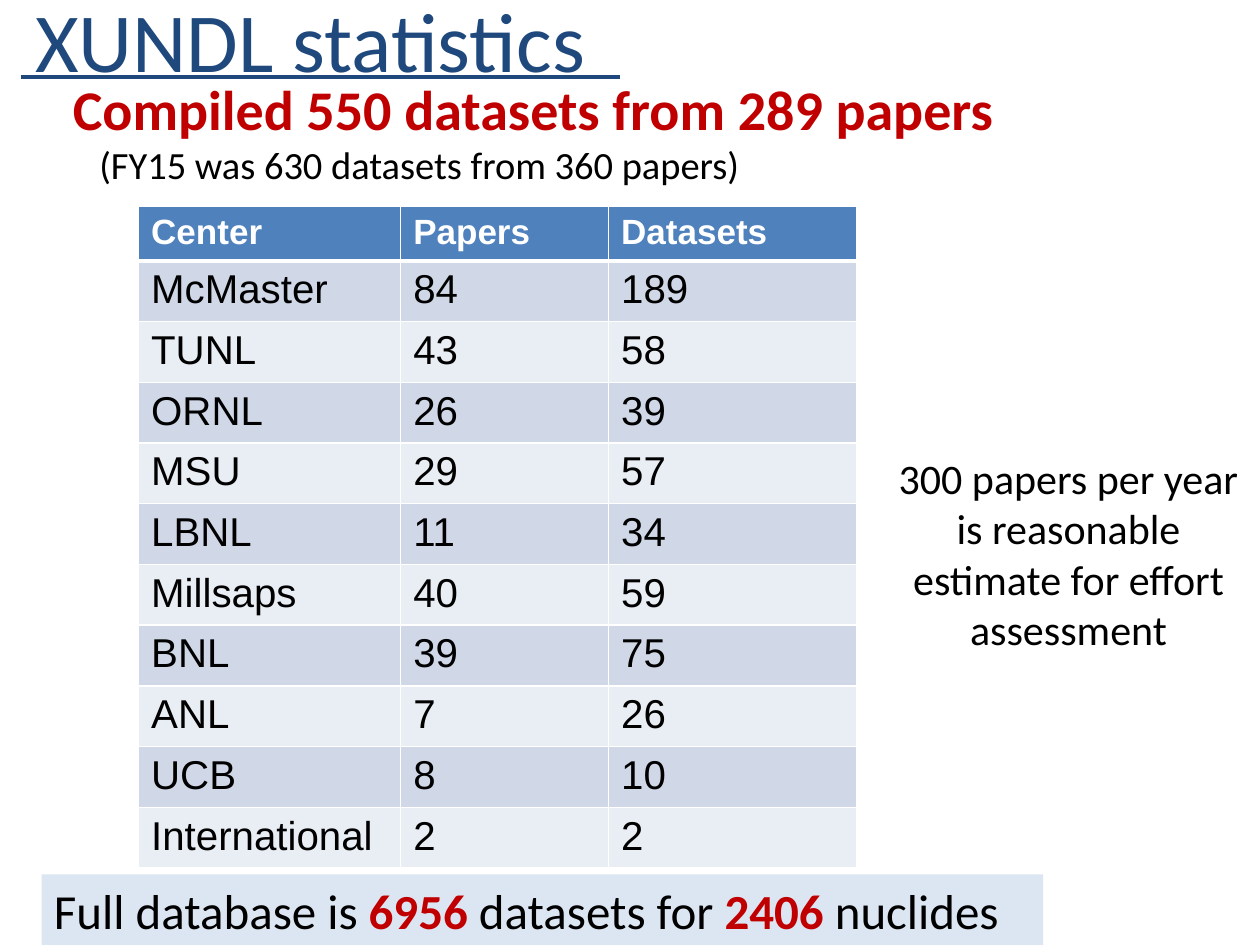
from dataclasses import dataclass

from lxml.etree import SubElement
from pptx import Presentation
from pptx.dml.color import RGBColor
from pptx.enum.shapes import MSO_CONNECTOR, MSO_SHAPE
from pptx.enum.text import MSO_ANCHOR, MSO_AUTO_SIZE, PP_ALIGN
from pptx.oxml.ns import qn
from pptx.util import Inches, Pt


@dataclass(frozen=True)
class Theme:
    navy: str = "1F497D"
    red: str = "C00000"
    black: str = "000000"
    white: str = "FFFFFF"
    header: str = "4F81BD"
    bands: tuple = ("D0D8E8", "E9EDF4")
    banner: str = "DCE6F2"
    text_font: str = "Calibri"
    table_font: str = "Arial"
    title_size: int = 48
    headline_size: int = 32
    banner_size: int = 28
    remark_size: int = 24
    detail_size: int = 22
    header_size: int = 20
    cell_size: int = 23


THEME = Theme()

CENTERS = [
    ("Center", "Papers", "Datasets"),
    ("McMaster", "84", "189"),
    ("TUNL", "43", "58"),
    ("ORNL", "26", "39"),
    ("MSU", "29", "57"),
    ("LBNL", "11", "34"),
    ("Millsaps", "40", "59"),
    ("BNL", "39", "75"),
    ("ANL", "7", "26"),
    ("UCB", "8", "10"),
    ("International", "2", "2"),
]
COLUMN_WIDTHS = (2.08, 1.65, 1.97)
HEADER_HEIGHT = 0.43
TABLE_HEIGHT = 5.25


def rgb(color):
    return RGBColor.from_string(color)


def style(font, size, color, bold=False, name=THEME.text_font):
    font.name, font.size, font.bold = name, Pt(size), bold
    font.color.rgb = rgb(color)


def add_title(slide, text):
    title = slide.shapes.title
    title.left, title.top = Inches(0.03), Inches(-0.14)
    title.width, title.height = Inches(7.26), Inches(0.91)
    frame = title.text_frame
    frame.text = text
    frame.auto_size = MSO_AUTO_SIZE.NONE
    frame.vertical_anchor = MSO_ANCHOR.TOP
    frame.margin_left = Inches(0.25)
    heading = frame.paragraphs[0]
    heading.alignment = PP_ALIGN.LEFT
    style(heading.font, THEME.title_size, THEME.navy)


def add_rule(slide, left, right, y):
    rule = slide.shapes.add_connector(
        MSO_CONNECTOR.STRAIGHT, Inches(left), Inches(y), Inches(right), Inches(y))
    rule.line.color.rgb = rgb(THEME.navy)
    rule.line.width = Pt(2.25)
    SubElement(rule.element.spPr, qn("a:effectLst"))


def add_text(slide, left, top, width, height, lines, align=PP_ALIGN.LEFT):
    """Each line is (text, size, color, bold, indent in inches)."""
    box = slide.shapes.add_textbox(
        Inches(left), Inches(top), Inches(width), Inches(height))
    frame = box.text_frame
    frame.word_wrap = True
    for index, (text, size, color, bold, indent) in enumerate(lines):
        line = frame.add_paragraph() if index else frame.paragraphs[0]
        line.text = text
        line.alignment = align
        if indent:
            line._p.get_or_add_pPr().set("marL", str(Inches(indent)))
        style(line.font, size, color, bold)


def add_borders(cell, bottom_width):
    properties = cell._tc.get_or_add_tcPr()
    widths = {"a:lnL": 1, "a:lnR": 1, "a:lnT": 1, "a:lnB": bottom_width}
    for position, (side, width) in enumerate(widths.items()):
        border = SubElement(properties, qn(side), w=str(Pt(width)))
        fill = SubElement(border, qn("a:solidFill"))
        SubElement(fill, qn("a:srgbClr"), val=THEME.white)
        properties.insert(position, border)


def add_center_table(slide, left, top):
    table = slide.shapes.add_table(
        len(CENTERS), len(COLUMN_WIDTHS), Inches(left), Inches(top),
        Inches(sum(COLUMN_WIDTHS)), Inches(TABLE_HEIGHT)).table
    for column, width in zip(table.columns, COLUMN_WIDTHS):
        column.width = Inches(width)
    body_height = (TABLE_HEIGHT - HEADER_HEIGHT) / (len(CENTERS) - 1)
    for r, values in enumerate(CENTERS):
        is_header = r == 0
        table.rows[r].height = Inches(HEADER_HEIGHT if is_header else body_height)
        for c, value in enumerate(values):
            cell = table.cell(r, c)
            cell.text = value
            cell.fill.solid()
            cell.fill.fore_color.rgb = rgb(
                THEME.header if is_header else THEME.bands[(r - 1) % 2])
            add_borders(cell, 3 if is_header else 1)
            style(cell.text_frame.paragraphs[0].font,
                  THEME.header_size if is_header else THEME.cell_size,
                  THEME.white if is_header else THEME.black,
                  is_header, THEME.table_font)


def add_banner(slide, left, top, width, height, parts):
    """Each part is (text, emphasized)."""
    banner = slide.shapes.add_shape(
        MSO_SHAPE.RECTANGLE, Inches(left), Inches(top), Inches(width), Inches(height))
    banner.shadow.inherit = False
    banner.fill.solid()
    banner.fill.fore_color.rgb = rgb(THEME.banner)
    banner.line.fill.background()
    frame = banner.text_frame
    frame.word_wrap = True
    frame.vertical_anchor = MSO_ANCHOR.TOP
    summary = frame.paragraphs[0]
    summary.alignment = PP_ALIGN.LEFT
    for text, emphasized in parts:
        run = summary.add_run()
        run.text = text
        style(run.font, THEME.banner_size,
              THEME.red if emphasized else THEME.black, emphasized)


def main():
    deck = Presentation()
    deck.slide_width, deck.slide_height = Inches(10), Inches(7.5)
    slide = deck.slides.add_slide(deck.slide_layouts[5])

    # Title and its underline
    add_title(slide, "XUNDL statistics")
    add_rule(slide, 0.17, 4.92, 0.61)

    # Counts per center
    add_center_table(slide, 1.1, 1.64)

    # Headline with last year's comparison
    add_text(slide, 0.48, 0.54, 9.05, 1.04, [
        ("Compiled 550 datasets from 289 papers",
         THEME.headline_size, THEME.red, True, 0),
        ("(FY15 was 630 datasets from 360 papers)",
         THEME.detail_size, THEME.black, False, 0.21),
    ])

    # Effort remark
    add_text(slide, 7.02, 3.54, 2.92, 1.72, [
        ("300 papers per year is reasonable estimate for effort assessment",
         THEME.remark_size, THEME.black, False, 0),
    ], PP_ALIGN.CENTER)

    # Database total
    add_banner(slide, 0.33, 6.94, 7.95, 0.57, [
        ("Full database is ", False), ("6956 ", True),
        ("datasets for ", False), ("2406", True), (" nuclides", False),
    ])

    deck.save("out.pptx")


if __name__ == "__main__":
    main()
